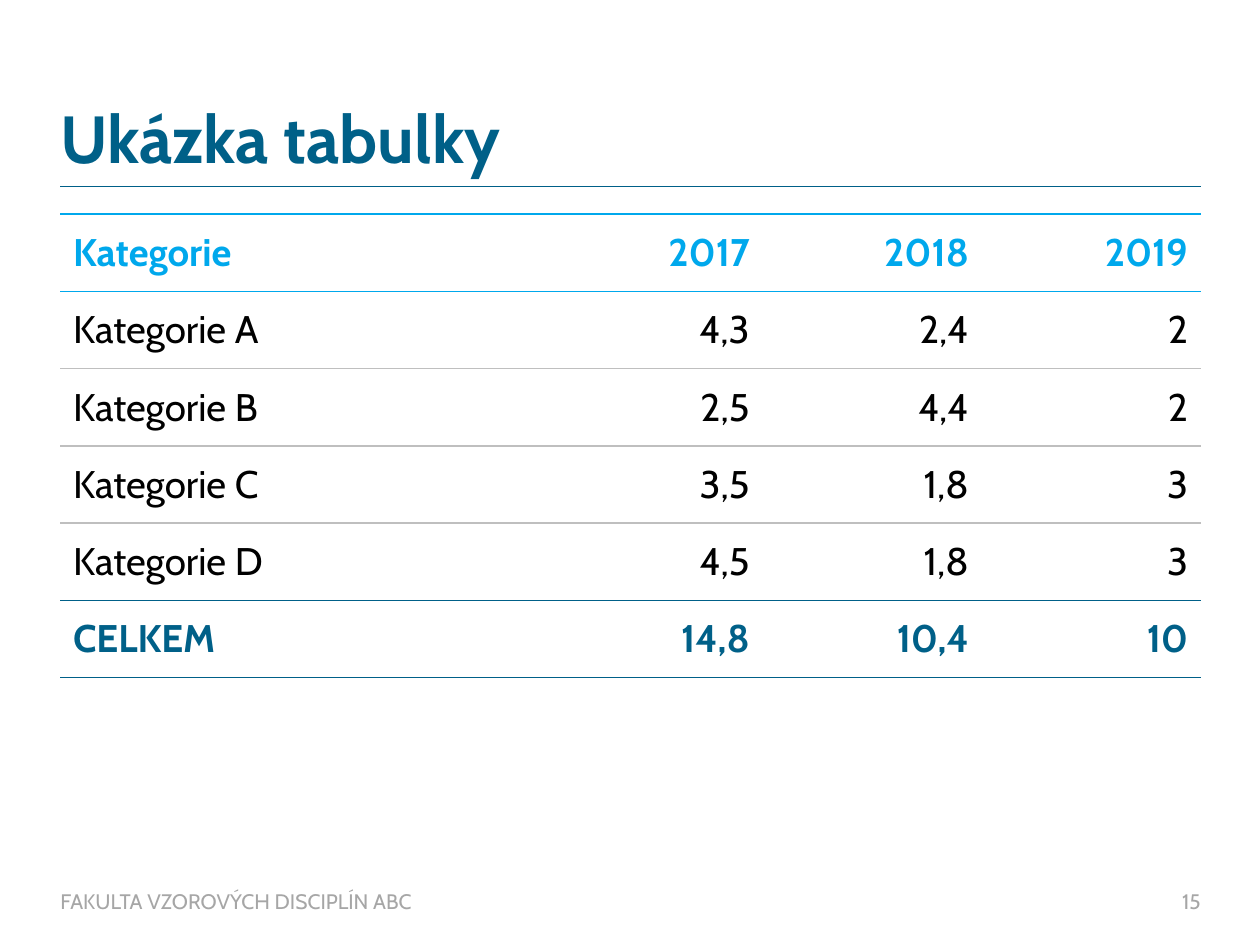
from lxml.etree import SubElement
from pptx import Presentation
from pptx.dml.color import RGBColor
from pptx.enum.shapes import MSO_CONNECTOR
from pptx.enum.text import MSO_ANCHOR as Anchor, MSO_AUTO_SIZE as AutoSize, PP_ALIGN as Align
from pptx.oxml.ns import qn
from pptx.util import Inches, Pt

NAVY, SKY, GREY, FOOTER_GREY, BLACK = "006088", "00A8EC", "BFBFBF", "A6A6A6", "000000"
LEFT, WIDTH = 0.48, 9.05
NO_GRID_STYLE = "{2D5ABB26-0587-4C30-8999-92F81FD0307C}"


def write(holder, text, size, color, bold=False, align=Align.LEFT, anchor=Anchor.MIDDLE, margins=(0, 0)):
    """Put one formatted line in a text frame or table cell; margins are (side, top and bottom)."""
    side, edge = (Inches(margin) for margin in margins)
    layout = {"margin_left": side, "margin_right": side, "margin_top": edge,
              "margin_bottom": edge, "vertical_anchor": anchor}
    for attribute, value in layout.items():
        setattr(holder, attribute, value)
    line = getattr(holder, "text_frame", holder).paragraphs[0]
    line.alignment = align
    run = line.add_run()
    run.text = text
    for attribute, value in {"name": "Cabin", "size": Pt(size), "bold": bold}.items():
        setattr(run.font, attribute, value)
    run.font.color.rgb = RGBColor.from_string(color)
    return line


def add_border(cell, side, color):
    border = SubElement(cell._tc.get_or_add_tcPr(), qn(f"a:{side}"), w=str(Pt(1)))
    SubElement(SubElement(border, qn("a:solidFill")), qn("a:srgbClr"), val=color)


deck = Presentation()
deck.slide_width, deck.slide_height = Inches(10), Inches(7.5)
slide = deck.slides.add_slide(deck.slide_layouts.get_by_name("Title Only"))

rule = slide.shapes.add_connector(
    MSO_CONNECTOR.STRAIGHT, Inches(LEFT), Inches(1.48), Inches(LEFT + WIDTH), Inches(1.48))
rule.line.color.rgb = RGBColor.from_string(NAVY)
rule.line.width = Pt(0.25)
SubElement(rule._element.spPr, qn("a:effectLst"))

title = slide.shapes.title
title.left, title.top, title.width, title.height = map(Inches, (LEFT, 0.83, WIDTH, 0.58))
heading = write(title.text_frame, "Ukázka tabulky", 38, NAVY, bold=True, anchor=Anchor.BOTTOM)
heading.line_spacing = 0.9
title.text_frame.auto_size = AutoSize.NONE

# Each row: text colour, bold, colour of the line below, cell texts
rows = [
    (SKY, True, SKY, ["Kategorie", "2017", "2018", "2019"]),
    (BLACK, False, GREY, ["Kategorie A", "4,3", "2,4", "2"]),
    (BLACK, False, GREY, ["Kategorie B", "2,5", "4,4", "2"]),
    (BLACK, False, GREY, ["Kategorie C", "3,5", "1,8", "3"]),
    (BLACK, False, NAVY, ["Kategorie D", "4,5", "1,8", "3"]),
    (NAVY, True, NAVY, ["CELKEM", "14,8", "10,4", "10"]),
]
year_width = 1.74
column_widths = [WIDTH - 3 * year_width] + [year_width] * 3
table = slide.shapes.add_table(
    len(rows), len(column_widths), Inches(LEFT), Inches(1.7), Inches(WIDTH), Inches(3.68)).table
table._tbl.tblPr.find(qn("a:tableStyleId")).text = NO_GRID_STYLE
table.horz_banding = False
for column, width in zip(table.columns, column_widths):
    column.width = Inches(width)

line_above = SKY
for table_row, (color, bold, line_below, texts) in zip(table.rows, rows):
    for index, (cell, text) in enumerate(zip(table_row.cells, texts)):
        add_border(cell, "lnT", line_above)
        add_border(cell, "lnB", line_below)
        cell.fill.background()
        write(cell, text, 22, color, bold, Align.RIGHT if index else Align.LEFT, margins=(0.1, 0.07))
    line_above = line_below

for left, width, text, align in [
    (LEFT, 7.65, "FAKULTA VZOROVÝCH DISCIPLÍN ABC", Align.LEFT),
    (9.15, 0.38, "15", Align.RIGHT),
]:
    footer = slide.shapes.add_textbox(Inches(left), Inches(7.05), Inches(width), Inches(0.2))
    footer.text_frame.word_wrap = True
    write(footer.text_frame, text, 12, FOOTER_GREY, align=align)

deck.save("out.pptx")
